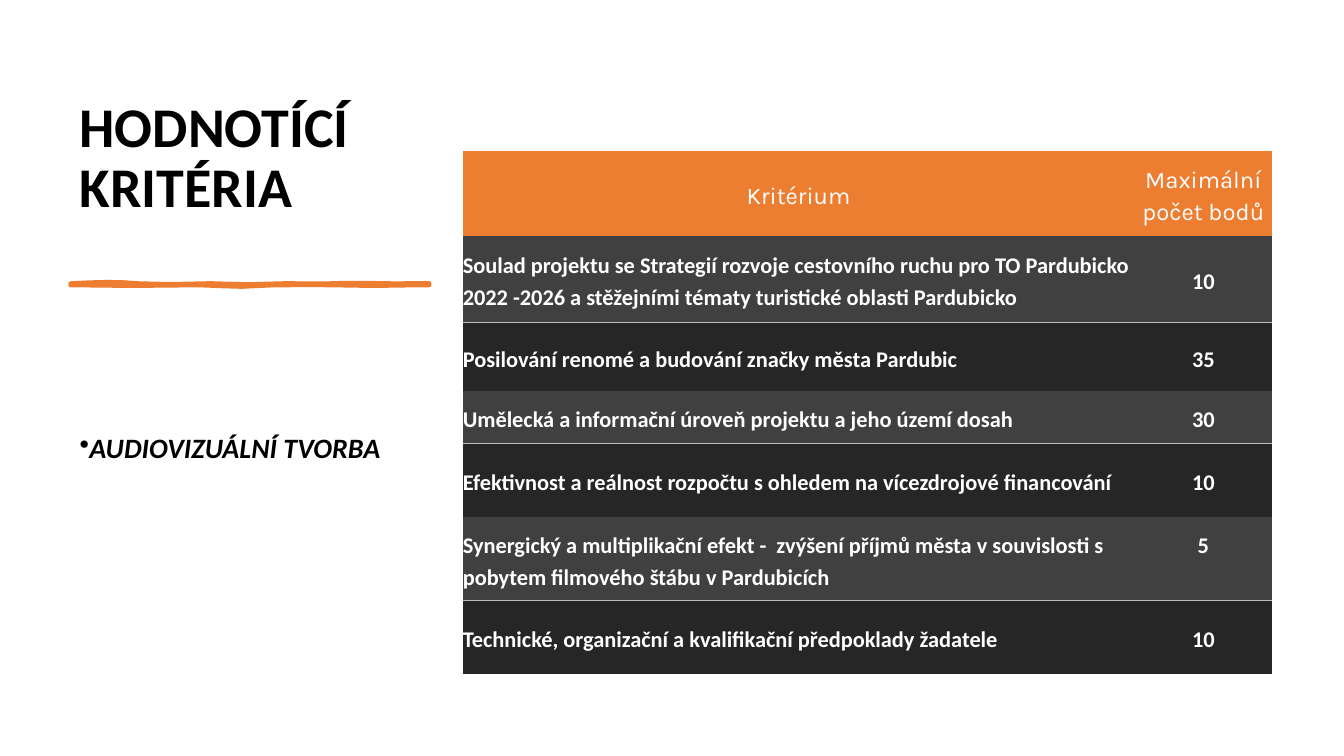
from dataclasses import dataclass

from lxml import etree
from pptx import Presentation
from pptx import util as u
from pptx.dml.color import RGBColor
from pptx.enum import text as t
from pptx.oxml import ns


@dataclass(frozen=True)
class Theme:
    black: str = "000000"
    white: str = "FFFFFF"
    accent: str = "ED7D31"
    row_light: str = "404040"
    row_dark: str = "262626"
    rule: str = "BFBFBF"
    body_font: str = "Calibri"
    header_font: str = "Karla"
    title_size: int = 40
    category_size: int = 20
    header_size: int = 17
    row_size: int = 16


@dataclass(frozen=True)
class Criterion:
    label: str
    points: str
    height: float
    points_anchor: t.MSO_ANCHOR = t.MSO_ANCHOR.MIDDLE
    margin_top: float = 0.11
    margin_bottom: float = 0.1


THEME = Theme()
HEADER = Criterion("Kritérium", "Maximální počet bodů", 0.84,
                   margin_top=0.1, margin_bottom=0.09)
CRITERIA = [
    Criterion("Soulad projektu se Strategií rozvoje cestovního ruchu pro TO Pardubicko "
              "2022 -2026 a stěžejními tématy turistické oblasti Pardubicko", "10", 0.86),
    Criterion("Posilování renomé a budování značky města Pardubic", "35", 0.68),
    Criterion("Umělecká a informační úroveň projektu a jeho území dosah", "30", 0.52),
    Criterion("Efektivnost a reálnost rozpočtu s ohledem na vícezdrojové financování",
              "10", 0.73),
    Criterion("Synergický a multiplikační efekt -  zvýšení příjmů města v souvislosti s "
              "pobytem filmového štábu v Pardubicích", "5", 0.82, t.MSO_ANCHOR.TOP),
    Criterion("Technické, organizační a kvalifikační předpoklady žadatele", "10", 0.73),
]
COLUMN_WIDTHS = (6.72, 1.31)

# Edges of the hand-drawn stroke, in thousandths of an inch
STROKE_UNIT = u.Inches(0.001)
STROKE_TOP = [(700, 2813), (880, 2804), (1060, 2799), (1220, 2802), (1380, 2813),
              (1700, 2820), (2090, 2812), (2450, 2822), (2840, 2812), (3200, 2815),
              (3440, 2808), (3590, 2808), (3900, 2813), (4260, 2812)]
STROKE_BOTTOM = [(4260, 2831), (4000, 2833), (3700, 2838), (3480, 2834), (3100, 2829),
                 (2700, 2832), (2400, 2846), (2180, 2840), (1990, 2831), (1660, 2834),
                 (1300, 2838), (1000, 2834), (700, 2831)]


def write(frame, content: str, *, size: int, font: str = THEME.body_font,
          color: str = THEME.black, bold: bool = False, italic: bool = False,
          align=t.PP_ALIGN.LEFT, spacing: float = 1.0, after: int = 0,
          bullet: str = "") -> None:
    """Fill a text frame with one formatted paragraph."""
    frame.word_wrap = True
    paragraph = frame.paragraphs[0]
    paragraph.text = content
    if bullet:
        properties = paragraph._p.get_or_add_pPr()
        properties.set("marL", "0")
        properties.set("indent", str(-u.Inches(0.25)))
        etree.SubElement(properties, ns.qn("a:buChar"), char=bullet)
    paragraph.alignment = align
    paragraph.line_spacing = spacing
    paragraph.space_before = u.Pt(0)
    paragraph.space_after = u.Pt(after)
    for run in paragraph.runs:
        run.font.size = u.Pt(size)
        run.font.name = font
        run.font.bold = bold
        run.font.italic = italic
        run.font.color.rgb = RGBColor.from_string(color)


def set_borders(cell, ruled_sides: str) -> None:
    """Rule the given sides (L, R, T, B) and clear the others."""
    properties = cell._tc.get_or_add_tcPr()
    for position, side in enumerate("LRTB"):
        border = etree.Element(ns.qn(f"a:ln{side}"), w=str(u.Pt(1)))
        if side in ruled_sides:
            fill = etree.SubElement(border, ns.qn("a:solidFill"))
            etree.SubElement(fill, ns.qn("a:srgbClr"), val=THEME.rule)
        else:
            etree.SubElement(border, ns.qn("a:noFill"))
        properties.insert(position, border)


def style_cell(cell, criterion: Criterion, fill: str, anchor, ruled_sides: str) -> None:
    cell.fill.solid()
    cell.fill.fore_color.rgb = RGBColor.from_string(fill)
    cell.vertical_anchor = anchor
    cell.margin_left, cell.margin_right = 0, u.Inches(0.06)
    cell.margin_top = u.Inches(criterion.margin_top)
    cell.margin_bottom = u.Inches(criterion.margin_bottom)
    set_borders(cell, ruled_sides)


def add_heading(slide) -> None:
    heading = slide.shapes.title
    heading.left, heading.top = u.Inches(0.69), u.Inches(0.7)
    heading.width, heading.height = u.Inches(3.75), u.Inches(1.53)
    heading.text_frame.auto_size = t.MSO_AUTO_SIZE.NONE
    heading.text_frame.vertical_anchor = t.MSO_ANCHOR.BOTTOM
    write(heading.text_frame, "HODNOTÍCÍ \vKRITÉRIA", size=THEME.title_size,
          bold=True, spacing=0.9)


def add_stroke(slide) -> None:
    start, *rest = STROKE_TOP + STROKE_BOTTOM
    builder = slide.shapes.build_freeform(*start, scale=STROKE_UNIT)
    builder.add_line_segments(rest, close=True)
    stroke = builder.convert_to_shape()
    stroke.shadow.inherit = False
    stroke.fill.solid()
    stroke.fill.fore_color.rgb = RGBColor.from_string(THEME.accent)
    stroke.line.color.rgb = RGBColor.from_string(THEME.accent)
    stroke.line.width = u.Pt(3)


def add_category(slide) -> None:
    category = slide.shapes.add_textbox(u.Inches(0.69), u.Inches(4.26),
                                        u.Inches(3.75), u.Inches(0.5))
    write(category.text_frame, "AUDIOVIZUÁLNÍ TVORBA", size=THEME.category_size,
          bold=True, italic=True, spacing=0.9, after=6, bullet="•")


def add_criteria(slide) -> None:
    rows = [HEADER, *CRITERIA]
    table = slide.shapes.add_table(
        len(rows), len(COLUMN_WIDTHS), u.Inches(4.59), u.Inches(1.5),
        u.Inches(sum(COLUMN_WIDTHS)), u.Inches(sum(r.height for r in rows))).table
    table.horz_banding = False
    for column, width in zip(table.columns, COLUMN_WIDTHS):
        column.width = u.Inches(width)

    for index, criterion in enumerate(rows):
        table.rows[index].height = u.Inches(criterion.height)
        is_header = index == 0
        # Light and dark rows alternate, with a rule under each light one
        if is_header:
            fill, ruled = THEME.accent, ""
        elif index % 2:
            fill, ruled = THEME.row_light, "B"
        else:
            fill, ruled = THEME.row_dark, "T"
        label, points = table.cell(index, 0), table.cell(index, 1)
        style_cell(label, criterion, fill, t.MSO_ANCHOR.MIDDLE, ruled)
        style_cell(points, criterion, fill, criterion.points_anchor, ruled)
        look = dict(size=THEME.header_size if is_header else THEME.row_size,
                    font=THEME.header_font if is_header else THEME.body_font,
                    color=THEME.white, bold=not is_header, spacing=1.15)
        write(label.text_frame, criterion.label,
              align=t.PP_ALIGN.CENTER if is_header else t.PP_ALIGN.LEFT, **look)
        write(points.text_frame, criterion.points, align=t.PP_ALIGN.CENTER, **look)


def main() -> None:
    deck = Presentation()
    deck.slide_width, deck.slide_height = u.Inches(13.33), u.Inches(7.5)
    slide = deck.slides.add_slide(deck.slide_layouts.get_by_name("Title Only"))
    add_heading(slide)
    add_stroke(slide)
    add_category(slide)
    add_criteria(slide)
    deck.save("out.pptx")


if __name__ == "__main__":
    main()
